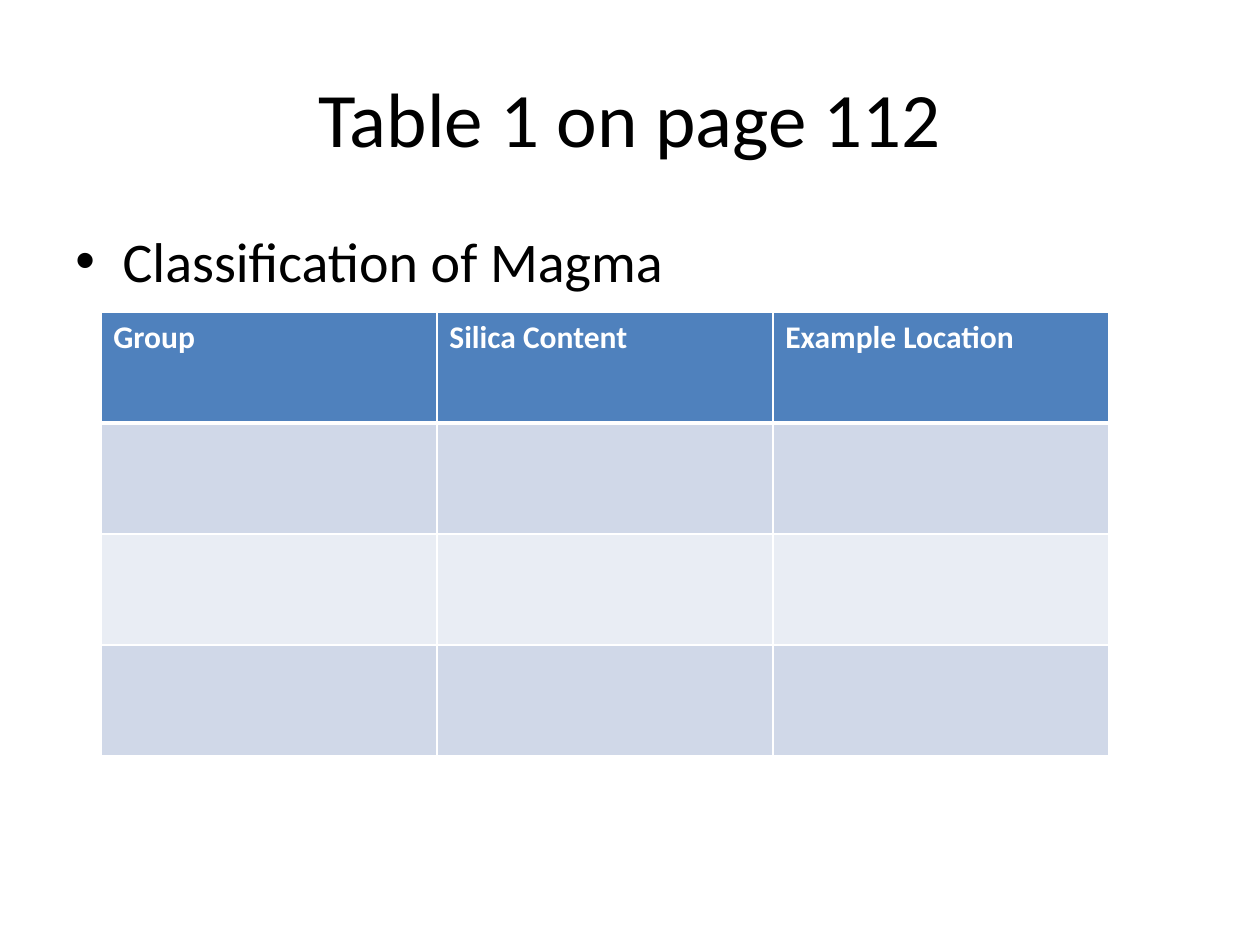
from lxml.etree import SubElement
from pptx import Presentation
from pptx.dml.color import RGBColor
from pptx.enum.text import MSO_ANCHOR, PP_ALIGN
from pptx.oxml.ns import qn
from pptx.util import Inches, Pt

BLACK = RGBColor(0x00, 0x00, 0x00)
WHITE = RGBColor(0xFF, 0xFF, 0xFF)
HEADER_BLUE = RGBColor(0x4F, 0x81, 0xBD)
BAND_COLORS = (RGBColor(0xD0, 0xD8, 0xE8), RGBColor(0xE9, 0xED, 0xF4))

HEADERS = ("Group", "Silica Content", "Example Location")
BLANK_ROWS = 3


class SlideBuilder:
    """Holds the style and the slide; areas are shares of the slide's size."""

    font_name = "Calibri"

    def __init__(self, presentation):
        self.width = presentation.slide_width
        self.height = presentation.slide_height
        self.slide = presentation.slides.add_slide(presentation.slide_layouts[5])

    def area(self, left, top, width, height):
        return (int(left * self.width), int(top * self.height),
                int(width * self.width), int(height * self.height))

    def format_runs(self, paragraph, size, color, bold=False):
        for run in paragraph.runs:
            run.font.name = self.font_name
            run.font.size = Pt(size)
            run.font.bold = bold
            run.font.color.rgb = color

    def title(self, text, share):
        shape = self.slide.shapes.title
        shape.left, shape.top, shape.width, shape.height = self.area(*share)
        shape.text_frame.text = text
        shape.text_frame.vertical_anchor = MSO_ANCHOR.MIDDLE
        paragraph = shape.text_frame.paragraphs[0]
        paragraph.alignment = PP_ALIGN.CENTER
        self.format_runs(paragraph, 44, BLACK)

    def bullet(self, text, share):
        shape = self.slide.shapes.add_textbox(*self.area(*share))
        shape.text_frame.word_wrap = True
        shape.text_frame.text = text
        paragraph = shape.text_frame.paragraphs[0]
        self.format_runs(paragraph, 32, BLACK)
        # Hanging indent, spacing as a share of the line, and bullet sign
        properties = paragraph._p.get_or_add_pPr()
        indent = Inches(0.375)
        properties.set("marL", str(indent))
        properties.set("indent", str(-indent))
        spacing = SubElement(properties, qn("a:spcBef"))
        SubElement(spacing, qn("a:spcPct"), val="20000")
        SubElement(properties, qn("a:buFont"), typeface="Arial")
        SubElement(properties, qn("a:buChar"), char="•")

    def borders(self, cell, **widths):
        properties = cell._tc.get_or_add_tcPr()
        for side, width in widths.items():
            line = SubElement(properties, qn(f"a:ln{side}"), w=str(Pt(width)))
            fill = SubElement(line, qn("a:solidFill"))
            SubElement(fill, qn("a:srgbClr"), val=str(WHITE))

    def table(self, headers, blank_rows, share):
        table = self.slide.shapes.add_table(
            blank_rows + 1, len(headers), *self.area(*share)).table
        for row_index, row in enumerate(table.rows):
            is_header = row_index == 0
            for column_index, cell in enumerate(row.cells):
                self.borders(cell, L=1, R=1, T=3 if row_index == 1 else 1,
                             B=3 if is_header else 1)
                cell.fill.solid()
                cell.fill.fore_color.rgb = (
                    HEADER_BLUE if is_header else BAND_COLORS[(row_index - 1) % 2])
                if is_header:
                    cell.text_frame.text = headers[column_index]
                    self.format_runs(cell.text_frame.paragraphs[0], 18, WHITE, True)


def main():
    presentation = Presentation()
    presentation.slide_width = Inches(10)
    presentation.slide_height = Inches(7.5)
    builder = SlideBuilder(presentation)

    # Heading and topic
    builder.title("Table 1 on page 112", (0.05, 0.04, 0.9, 1 / 6))
    builder.bullet("Classification of Magma", (0.05, 0.7 / 3, 0.9, 0.66))

    # Magma table, left open to be filled in
    builder.table(HEADERS, BLANK_ROWS, (0.08, 0.33, 0.8, 0.47))

    presentation.save("out.pptx")


if __name__ == "__main__":
    main()
